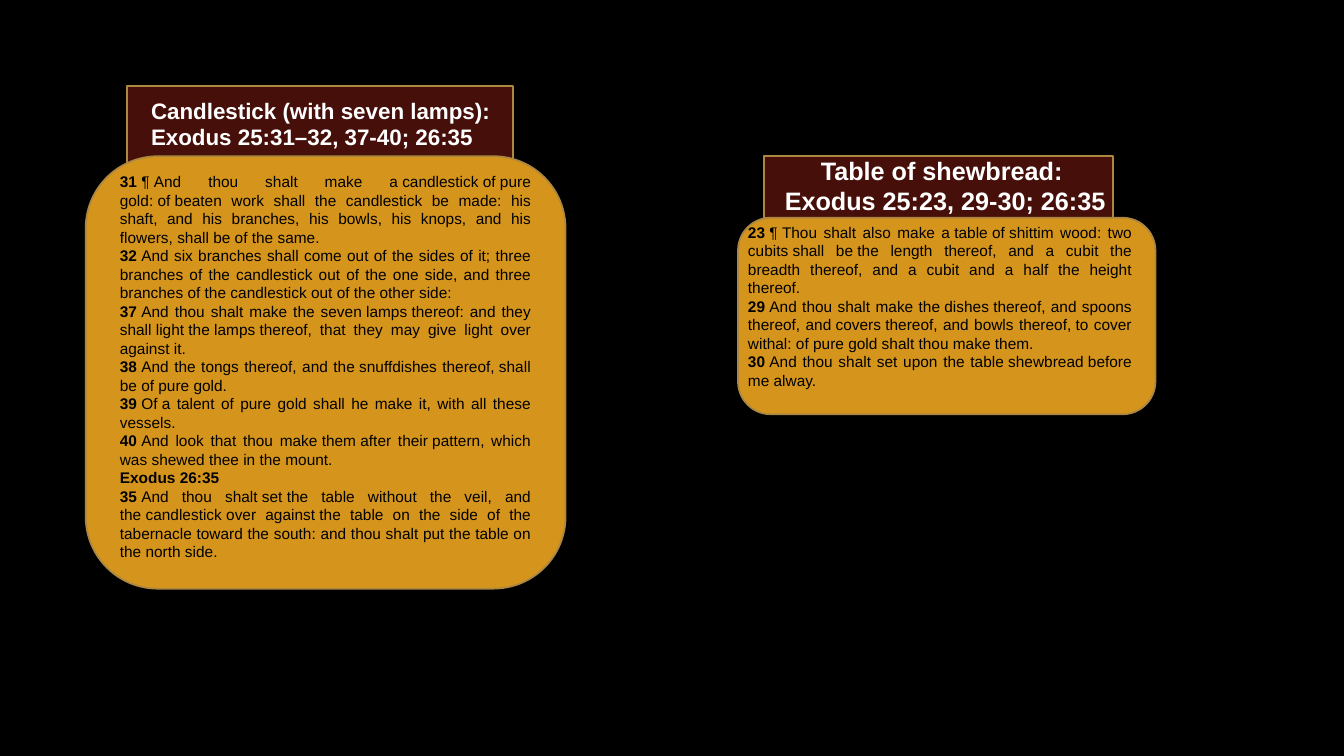
from dataclasses import dataclass

from pptx import Presentation
from pptx.dml.color import RGBColor
from pptx.enum import shapes, text
from pptx.util import Inches, Pt

# "~" stands for a no-break space; each verse is (bold number, wording).
TABLE_VERSES = [
    ("23~", "¶~Thou shalt also make a~table~of~shittim wood: two cubits~shall be~the length "
            "thereof, and a cubit the breadth thereof, and a cubit and a half the height thereof."),
    ("29~", "And thou shalt make the~dishes~thereof, and spoons thereof, and~covers~thereof, "
            "and bowls thereof,~to cover withal:~of~pure gold shalt thou make them."),
    ("30~", "And thou shalt set upon the table~shewbread~before me alway."),
]
CANDLESTICK_VERSES = [
    ("31~", "¶~And thou shalt make a~candlestick~of~pure gold:~of~beaten work shall the "
            "candlestick be made: his shaft, and his branches, his bowls, his knops, and his "
            "flowers, shall be of~the same."),
    ("32~", "And six branches shall come out of the sides of it; three branches of the candlestick "
            "out of the one side, and three branches of the candlestick out of the other side:"),
    ("37~", "And thou shalt make the seven~lamps~thereof: and they shall~light~the~lamps~thereof, "
            "that they may give light over against it."),
    ("38~", "And the tongs thereof, and the~snuffdishes thereof,~shall be of pure gold."),
    ("39~", "Of~a talent of pure gold shall he make it, with all these vessels."),
    ("40~", "And look that thou make~them~after their~pattern, which was shewed thee in the mount."),
    ("Exodus 26:35", ""),
    ("35~", "And thou shalt~set~the table without the veil, and the~candlestick~over against~the "
            "table on the side of the tabernacle toward the south: and thou shalt put the table "
            "on the north side."),
]
# Boxes are left, top, width, height in inches.
PANELS = [
    dict(heading=["Table of shewbread:", " Exodus 25:23, 29-30; 26:35"],
         heading_size=18, heading_align=text.PP_ALIGN.CENTER, verses=TABLE_VERSES,
         banner=(7.58, 1.55, 3.46, 0.61), card=(7.32, 2.16, 4.14, 1.95),
         heading_box=(7.6, 1.49, 3.48, 0.71), verse_box=(7.32, 2.16, 4.01, 1.95)),
    dict(heading=["Candlestick (with seven lamps):", "Exodus 25:31–32, 37-40; 26:35"],
         heading_size=16, heading_align=text.PP_ALIGN.LEFT, verses=CANDLESTICK_VERSES,
         banner=(1.26, 0.85, 3.83, 0.81), card=(0.85, 1.55, 4.76, 4.29),
         heading_box=(1.4, 0.91, 3.67, 0.64), verse_box=(1.09, 1.66, 4.28, 3.99)),
]


@dataclass(frozen=True)
class Theme:
    background: RGBColor = RGBColor(0x00, 0x00, 0x00)
    banner: RGBColor = RGBColor(0x46, 0x0F, 0x0A)
    card: RGBColor = RGBColor(0xD5, 0x95, 0x1C)
    outline: RGBColor = RGBColor(0xAC, 0x87, 0x41)
    heading: RGBColor = RGBColor(0xFF, 0xFF, 0xFF)
    verse: RGBColor = RGBColor(0x00, 0x00, 0x00)
    font: str = "Arial"
    verse_size: int = 11
    line_width: float = 1.25


THEME = Theme()


def add_block(s, kind, box, fill):
    sp = s.shapes.add_shape(kind, *map(Inches, box))
    sp.shadow.inherit = False
    sp.fill.solid()
    sp.fill.fore_color.rgb = fill
    sp.line.color.rgb = THEME.outline
    sp.line.width = Pt(THEME.line_width)


def add_text(s, box, paragraphs, size, color, align, wrap):
    """Add a text box; each paragraph is a list of (wording, bold) runs."""
    tf = s.shapes.add_textbox(*map(Inches, box)).text_frame
    tf.word_wrap = wrap
    tf.auto_size = text.MSO_AUTO_SIZE.SHAPE_TO_FIT_TEXT
    for i, runs in enumerate(paragraphs):
        p = tf.add_paragraph() if i else tf.paragraphs[0]
        p.alignment = align
        for wording, bold in runs:
            r = p.add_run()
            r.text = wording.replace("~", chr(160))
            r.font.name = THEME.font
            r.font.size = Pt(size)
            r.font.bold = bold
            r.font.color.rgb = color


def main():
    prs = Presentation()
    prs.slide_width, prs.slide_height = Inches(13.33), Inches(7.5)
    s = prs.slides.add_slide(prs.slide_layouts[6])
    s.background.fill.solid()
    s.background.fill.fore_color.rgb = THEME.background

    for panel in PANELS:
        add_block(s, shapes.MSO_SHAPE.RECTANGLE, panel["banner"], THEME.banner)
        add_block(s, shapes.MSO_SHAPE.ROUNDED_RECTANGLE, panel["card"], THEME.card)
        add_text(s, panel["heading_box"], [[(line, True)] for line in panel["heading"]],
                 panel["heading_size"], THEME.heading, panel["heading_align"], wrap=False)
        verses = [[(number, True)] + ([(wording, False)] if wording else [])
                  for number, wording in panel["verses"]]
        add_text(s, panel["verse_box"], verses, THEME.verse_size, THEME.verse,
                 text.PP_ALIGN.JUSTIFY, wrap=True)

    prs.save("out.pptx")


if __name__ == "__main__":
    main()
